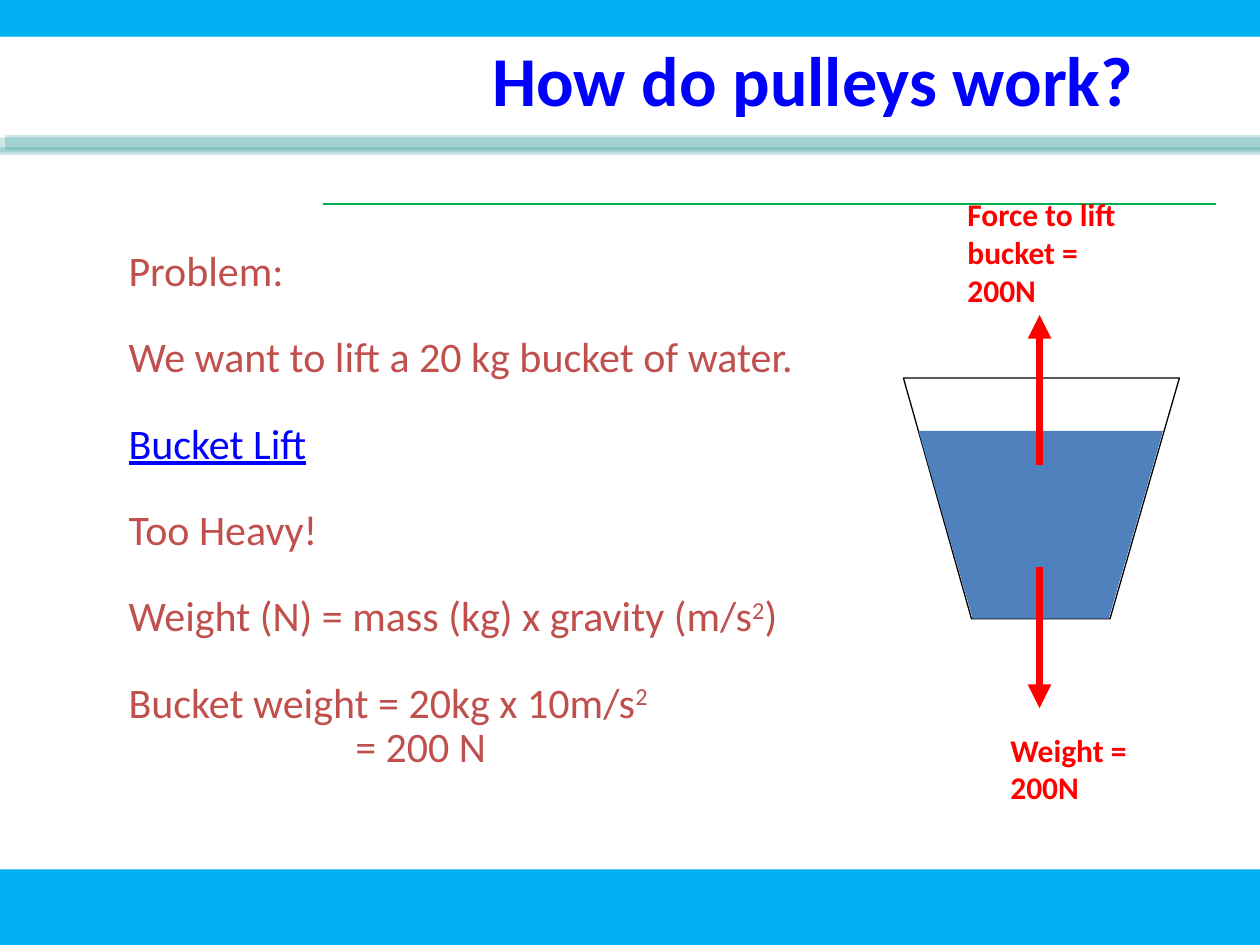
from dataclasses import dataclass

from lxml import etree
from pptx import Presentation
from pptx.dml.color import RGBColor
from pptx.enum.shapes import MSO_CONNECTOR, MSO_SHAPE
from pptx.enum.text import MSO_ANCHOR, MSO_AUTO_SIZE, PP_ALIGN
from pptx.oxml.ns import qn
from pptx.util import Inches, Pt

RECTANGLE = MSO_SHAPE.RECTANGLE
STRAIGHT = MSO_CONNECTOR.STRAIGHT
CENTER, LEFT = PP_ALIGN.CENTER, PP_ALIGN.LEFT
TOP, MIDDLE = MSO_ANCHOR.TOP, MSO_ANCHOR.MIDDLE
NO_FIT = MSO_AUTO_SIZE.NONE

SKY, GREEN, TEAL = "00B0F0", "00B050", "008080"
BLUE, BRICK, RED = "0000FF", "C0504D", "FF0000"
WATER, BLACK = "4F81BD", "000000"


@dataclass
class Band:
    left: float
    top: float
    width: float
    height: float
    color: str
    opacity: int = 100


@dataclass
class Line:
    start: tuple[float, float]
    end: tuple[float, float]
    color: str
    weight: float
    arrow: bool = False


@dataclass
class Step:
    text: str
    color: str = BRICK
    underline: bool = False
    gap: float = 29.2
    indent: float = 0


@dataclass
class Label:
    text: str
    left: float
    top: float
    width: float
    height: float


BANDS = [
    Band(0, 6.9, 10, 0.6, SKY),
    Band(0, 0, 10, 0.29, SKY),
    Band(0.04, 1.07, 9.96, 0.12, TEAL, 20),
    Band(-0.28, 1.09, 10.28, 0.12, TEAL, 20),
    Band(-0.28, 1.17, 10.28, 0.06, TEAL, 20),
]
RULE = Line((2.56, 1.62), (9.65, 1.62), GREEN, 0.75)
FORCES = [
    Line((8.25, 4.5), (8.25, 5.62), RED, 4.5, True),
    Line((8.25, 3.69), (8.25, 2.5), RED, 4.5, True),
]
STEPS = [
    Step("Problem:", gap=0),
    Step("We want to lift a 20 kg bucket of water."),
    Step("Bucket Lift", BLUE, True),
    Step("Too Heavy!"),
    Step("Weight (N) = mass (kg) x gravity (m/s^2^)"),
    Step("Bucket weight = 20kg x 10m/s^2"),
    Step("= 200 N", gap=4.8, indent=1.8),
]
LABELS = [
    Label("Weight = 200N", 7.92, 5.75, 1.22, 0.7),
    Label("Force to lift bucket = 200N", 7.58, 1.5, 1.4, 1),
]
BUCKET = [(7.17, 3), (7.71, 4.91), (8.81, 4.91), (9.36, 3)]
BUCKET_WATER = [(7.29, 3.42), (7.72, 4.91), (8.8, 4.91), (9.23, 3.42)]


def rgb(color: str) -> RGBColor:
    return RGBColor.from_string(color)


def place(box, left: float, top: float, width: float, height: float):
    box.left, box.top = Inches(left), Inches(top)
    box.width, box.height = Inches(width), Inches(height)


def write(paragraph, text, *, size, color, bold=False, underline=False,
          align=LEFT, spacing=1.0, gap=0.0):
    paragraph.alignment = align
    paragraph.line_spacing = spacing
    paragraph.space_before = Pt(gap)
    for position, part in enumerate(text.split("^")):
        run = paragraph.add_run()
        run.text = part
        run.font.name = "Calibri"
        run.font.size = Pt(size)
        run.font.bold = bold
        run.font.underline = underline
        run.font.color.rgb = rgb(color)
        if position % 2:
            run._r.get_or_add_rPr().set("baseline", "30000")


def draw_band(slide, band: Band):
    bar = slide.shapes.add_shape(RECTANGLE, Inches(band.left), Inches(band.top),
                                 Inches(band.width), Inches(band.height))
    bar.shadow.inherit = False
    bar.fill.solid()
    bar.fill.fore_color.rgb = rgb(band.color)
    bar.line.fill.background()
    if band.opacity < 100:
        solid = bar._element.spPr.find(qn("a:solidFill"))
        etree.SubElement(solid[0], qn("a:alpha"), val=str(band.opacity * 1000))


def draw_line(slide, line: Line):
    connector = slide.shapes.add_connector(
        STRAIGHT, *(Inches(value) for value in line.start + line.end))
    connector.line.color.rgb = rgb(line.color)
    connector.line.width = Pt(line.weight)
    if line.arrow:
        etree.SubElement(connector.line._get_or_add_ln(), qn("a:tailEnd"), type="triangle")
    etree.SubElement(connector._element.spPr, qn("a:effectLst"))


def draw_outline(slide, points: list, fill: str = "", stroke: str = ""):
    corners = [(Inches(x), Inches(y)) for x, y in points]
    builder = slide.shapes.build_freeform(*corners[0])
    builder.add_line_segments(corners[1:], close=True)
    outline = builder.convert_to_shape()
    outline.shadow.inherit = False
    if fill:
        outline.fill.solid()
        outline.fill.fore_color.rgb = rgb(fill)
    else:
        outline.fill.background()
    if stroke:
        outline.line.color.rgb = rgb(stroke)
        outline.line.width = Pt(0.75)
    else:
        outline.line.fill.background()


def draw_label(slide, label: Label):
    box = slide.shapes.add_textbox(Inches(label.left), Inches(label.top),
                                   Inches(label.width), Inches(label.height))
    box.text_frame.word_wrap = True
    write(box.text_frame.paragraphs[0], label.text, size=18, color=RED, bold=True)


def fill_title(title):
    place(title, 1.95, 0, 9, 1.25)
    frame = title.text_frame
    frame.auto_size = NO_FIT
    frame.vertical_anchor = MIDDLE
    write(frame.paragraphs[0], "How do pulleys work?", size=40, color=BLUE,
          bold=True, align=CENTER)


def fill_steps(body):
    place(body, 0.92, 2, 8.41, 4.54)
    frame = body.text_frame
    frame.auto_size = NO_FIT
    frame.vertical_anchor = TOP
    for number, step in enumerate(STEPS):
        paragraph = frame.add_paragraph() if number else frame.paragraphs[0]
        properties = paragraph._p.get_or_add_pPr()
        hanging = 0 if step.indent else 0.38
        properties.set("marL", str(Inches(step.indent or hanging)))
        properties.set("indent", str(Inches(-hanging)))
        etree.SubElement(properties, qn("a:buNone"))
        write(paragraph, step.text, size=24, color=step.color,
              underline=step.underline, spacing=0.7, gap=step.gap)


def main():
    presentation = Presentation()
    presentation.slide_width, presentation.slide_height = Inches(10), Inches(7.5)
    slide = presentation.slides.add_slide(presentation.slide_layouts[1])
    fill_title(slide.shapes.title)
    fill_steps(slide.placeholders[1])
    for band in BANDS:
        draw_band(slide, band)
    draw_outline(slide, BUCKET, stroke=BLACK)
    draw_outline(slide, BUCKET_WATER, fill=WATER)
    for line in [RULE, *FORCES]:
        draw_line(slide, line)
    for label in LABELS:
        draw_label(slide, label)
    presentation.save("out.pptx")


if __name__ == "__main__":
    main()
